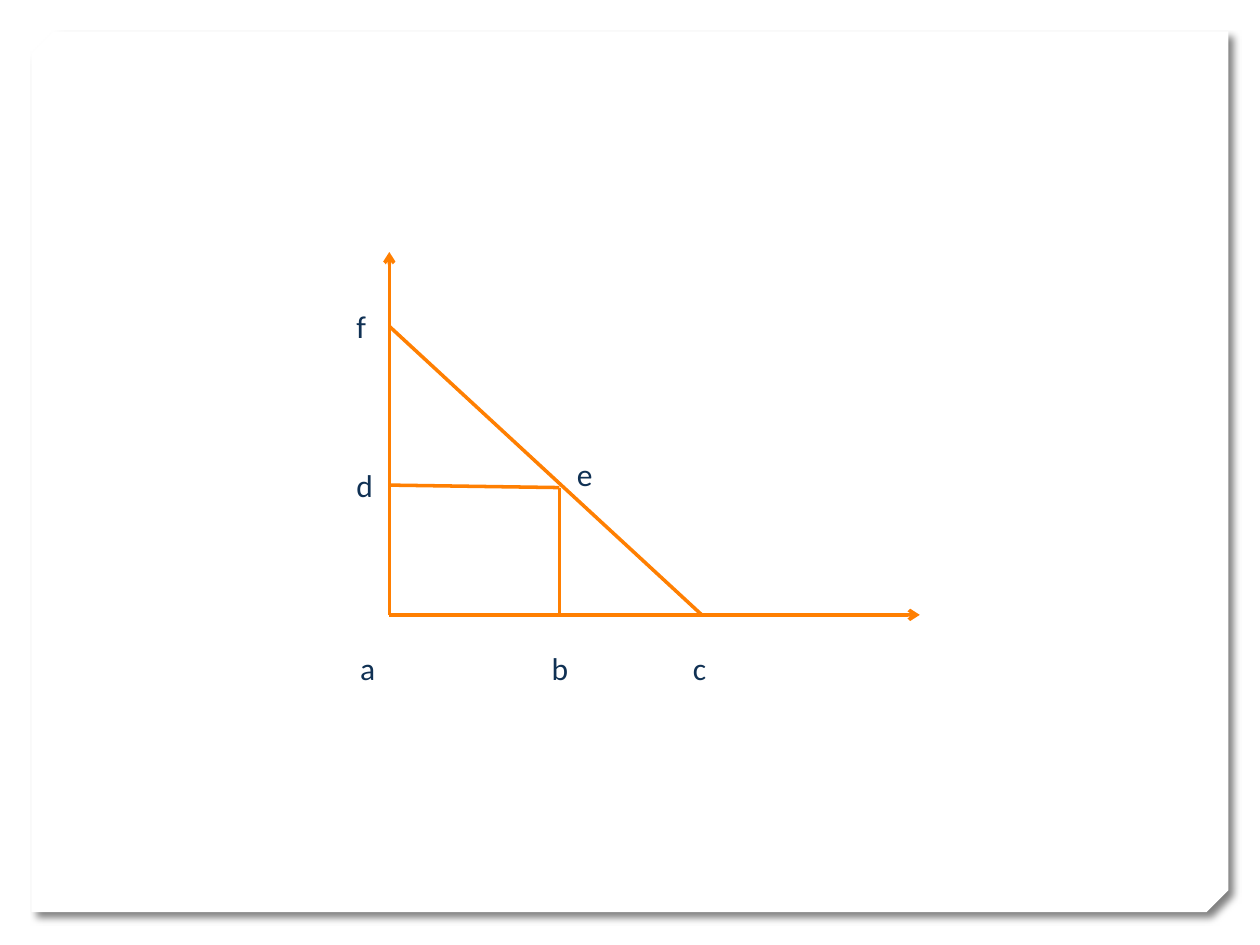
from dataclasses import dataclass

from lxml.etree import SubElement
from pptx import Presentation
from pptx.dml.color import RGBColor
from pptx.enum.shapes import MSO_CONNECTOR, MSO_SHAPE
from pptx.enum.text import MSO_AUTO_SIZE
from pptx.oxml.ns import qn
from pptx.util import Inches, Pt


@dataclass(frozen=True)
class Theme:
    paper: RGBColor = RGBColor(0xFF, 0xFF, 0xFF)
    line: RGBColor = RGBColor(0xFF, 0x7F, 0x01)
    text: RGBColor = RGBColor(0x10, 0x31, 0x54)
    shadow: str = "000000"
    font: str = "Calibri"
    label_size: Pt = Pt(18)
    line_width: Pt = Pt(2)


THEME = Theme()
LEFT, MIDDLE, RIGHT = 3.09, 4.44, 5.57
BASE = 4.88
ORIGIN = (LEFT, BASE)
CORNER = (MIDDLE, 3.87)
AXES = [(ORIGIN, (7.3, BASE)), (ORIGIN, (LEFT, 2))]
SEGMENTS = [
    ((LEFT, 2.59), (RIGHT, BASE)),
    ((LEFT, 3.85), CORNER),
    (CORNER, (MIDDLE, BASE)),
]
LABELS = [
    ("a", 2.76, 5.1, 0.33),
    ("b", 4.28, 5.1, 0.34),
    ("c", 5.4, 5.1, 0.31),
    ("d", 2.73, 3.65, 0.34),
    ("e", 4.48, 3.56, 0.33),
    ("f", 2.73, 2.39, 0.29),
]


def apply(target, values):
    for name, value in values.items():
        setattr(target, name, value)


def add_sheet(page):
    sheet = page.shapes.add_shape(
        MSO_SHAPE.SNIP_2_DIAG_RECTANGLE,
        Inches(0.25), Inches(0.25), Inches(9.5), Inches(6.99),
    )
    sheet.adjustments[0] = 0
    sheet.adjustments[1] = 0.025
    sheet.fill.solid()
    sheet.fill.fore_color.rgb = THEME.paper
    sheet.line.fill.background()
    sheet.shadow.inherit = False
    properties = sheet._element.spPr
    properties.find(qn("a:xfrm")).set("flipV", "1")
    shadow = SubElement(
        properties.find(qn("a:effectLst")), qn("a:outerShdw"),
        blurRad=str(Pt(4)), dist=str(Pt(5)), dir=str(45 * 60000),
        algn="tl", rotWithShape="0",
    )
    color = SubElement(shadow, qn("a:srgbClr"), val=THEME.shadow)
    SubElement(color, qn("a:alpha"), val="50000")


def add_line(page, start, end, arrow=False):
    points = [Inches(value) for value in (*start, *end)]
    connector = page.shapes.add_connector(MSO_CONNECTOR.STRAIGHT, *points)
    connector.line.color.rgb = THEME.line
    connector.line.width = THEME.line_width
    properties = connector._element.spPr
    if arrow:
        SubElement(properties.find(qn("a:ln")), qn("a:tailEnd"), type="arrow")
    SubElement(properties, qn("a:effectLst"))


def add_label(page, text, left, top, width):
    box = page.shapes.add_textbox(
        Inches(left), Inches(top), Inches(width), Inches(0.4)
    )
    apply(box.text_frame, {
        "word_wrap": False,
        "auto_size": MSO_AUTO_SIZE.SHAPE_TO_FIT_TEXT,
    })
    span = box.text_frame.paragraphs[0].add_run()
    span.text = text
    apply(span.font, {"name": THEME.font, "size": THEME.label_size})
    span.font.color.rgb = THEME.text


def main():
    deck = Presentation()
    apply(deck, {"slide_width": Inches(10), "slide_height": Inches(7.5)})
    page = deck.slides.add_slide(deck.slide_layouts[6])
    page.background.fill.solid()
    page.background.fill.fore_color.rgb = THEME.paper
    add_sheet(page)
    for start, end in AXES:
        add_line(page, start, end, arrow=True)
    for start, end in SEGMENTS:
        add_line(page, start, end)
    for label in LABELS:
        add_label(page, *label)
    deck.save("out.pptx")


if __name__ == "__main__":
    main()
